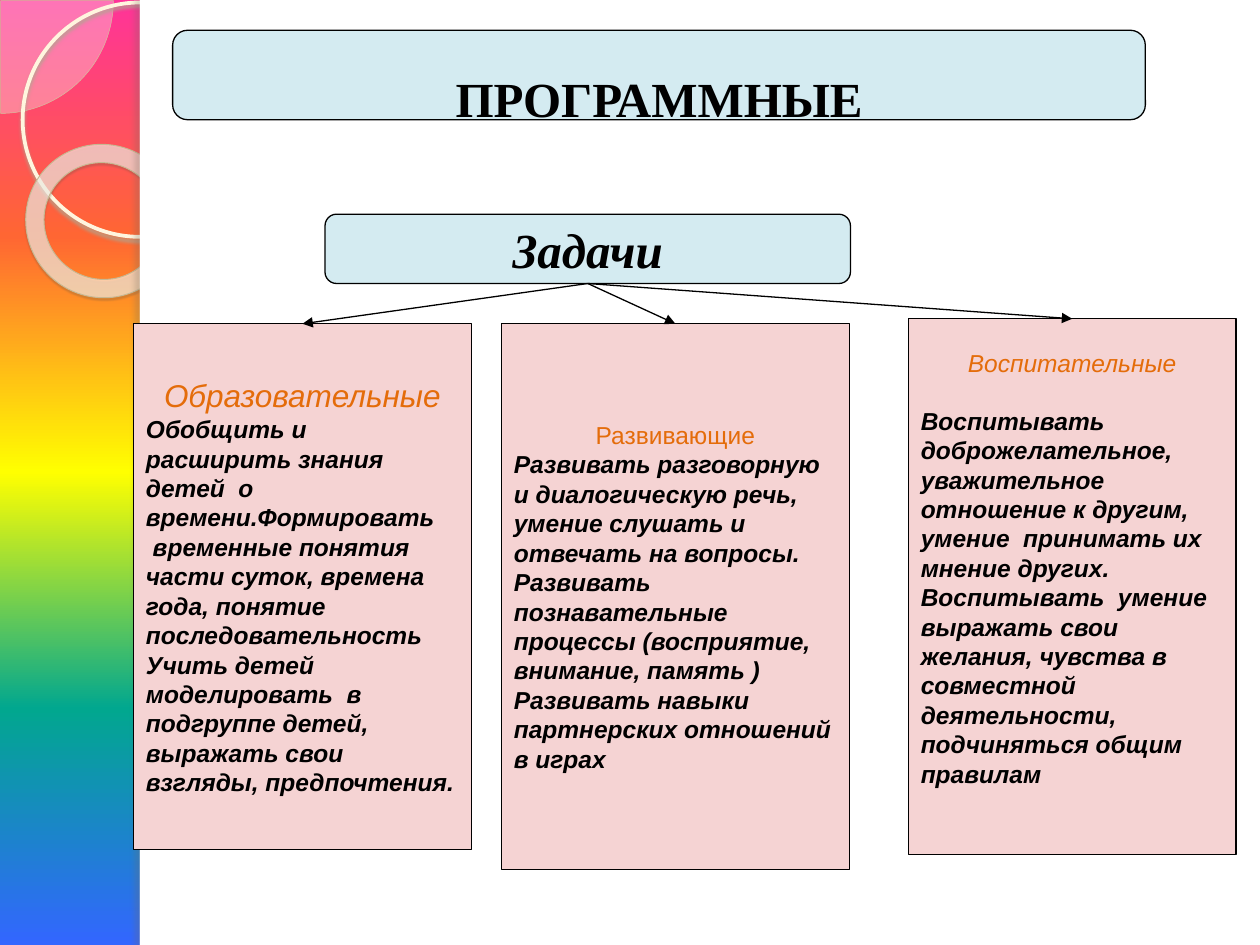
"""Build the slide of programme tasks in three groups."""
import pptx
import pptx.util
import pptx.dml.color
import pptx.enum.shapes
import pptx.enum.text
import pptx.oxml
import pptx.oxml.ns

Inches = pptx.util.Inches
Pt = pptx.util.Pt
RGB = pptx.dml.color.RGBColor
Kind = pptx.enum.shapes.MSO_SHAPE
Align = pptx.enum.text.PP_ALIGN
Anchor = pptx.enum.text.MSO_ANCHOR
qn = pptx.oxml.ns.qn

BLACK = RGB(0x00, 0x00, 0x00)
WHITE = RGB(0xFF, 0xFF, 0xFF)
ROSE = RGB(0xF5, 0xD3, 0xD3)
AQUA = RGB(0xD4, 0xEB, 0xF1)
ORANGE = RGB(0xE4, 0x6C, 0x0A)
IVORY = RGB(0xFE, 0xFA, 0xF4)
CREAM = RGB(0xFF, 0xF5, 0xDE)
PEARL = RGB(0xFF, 0xFC, 0xF5)
SAND = RGB(0xD3, 0xC3, 0x9F)
TAN = RGB(0xC7, 0xB8, 0x93)
DUSK = RGB(0xB0, 0xA6, 0x8F)
UMBER = RGB(0x5A, 0x54, 0x44)
STONE = RGB(0x73, 0x6F, 0x63)
RAINBOW = [RGB(0xFF, 0x33, 0x99), RGB(0xFF, 0x66, 0x33), RGB(0xFF, 0xFF, 0x00),
           RGB(0x01, 0xA7, 0x8F), RGB(0x33, 0x66, 0xFF)]

GROUPS = [
    ((1.06, 2.57, 2.68, 4.17), "Образовательные", 18, True, 0, 0.05, [
        "Обобщить и расширить знания детей  о времени.Формировать",
        " временные понятия части суток, времена года, понятие последовательность "
        "Учить детей моделировать  в подгруппе детей, выражать свои взгляды, "
        "предпочтения."]),
    ((3.98, 2.57, 2.76, 4.33), "Развивающие", 14, False, 0, 0.05, [
        "Развивать разговорную и диалогическую речь, умение слушать и отвечать "
        "на вопросы.",
        "Развивать познавательные процессы (восприятие, внимание, память )",
        "Развивать навыки партнерских отношений в играх"]),
    ((7.21, 2.53, 2.6, 4.25), "Воспитательные", 14, True, 16, 0.34, [
        "Воспитывать доброжелательное, уважительное отношение к другим, умение  "
        "принимать их мнение других.",
        "Воспитывать  умение выражать свои желания, чувства в совместной "
        "деятельности, подчиняться общим правилам"]),
]


class Deck:
    """Hold the style and the current slide."""

    sans = "Arial"
    serif = "Times New Roman"

    def __init__(self):
        self.file = pptx.Presentation()
        self.file.slide_width, self.file.slide_height = Inches(10), Inches(7.5)
        self.slide = self.file.slides.add_slide(self.file.slide_layouts[5])

    def back(self, colors):
        fill = self.slide.background.fill
        fill.gradient()
        fill.gradient_angle = 270
        stops = next(self.slide.element.iter(qn("a:gsLst")))
        for stop in list(stops):
            stops.remove(stop)
        step = 100000 // (len(colors) - 1)
        for i, color in enumerate(colors):
            stops.append(pptx.oxml.parse_xml(
                f'<a:gs {pptx.oxml.ns.nsdecls("a")} pos="{i * step}">'
                f'<a:srgbClr val="{color}"/></a:gs>'))

    def shape(self, kind, place, fill=None, line=None, width=0.75, alpha=100):
        item = self.slide.shapes.add_shape(kind, *map(Inches, place))
        item.shadow.inherit = False
        if fill is None:
            item.fill.background()
        else:
            item.fill.solid()
            item.fill.fore_color.rgb = fill
        if alpha < 100:
            tint = next(item.element.spPr.iter(qn("a:srgbClr")))
            tint.append(pptx.oxml.parse_xml(
                f'<a:alpha {pptx.oxml.ns.nsdecls("a")} val="{alpha * 1000}"/>'))
        if line is None:
            item.line.fill.background()
        else:
            item.line.color.rgb = line
            item.line.width = Pt(width)
        return item

    def shade(self, item, color, alpha, blur, dist, angle):
        item.element.spPr.find(qn("a:effectLst")).append(pptx.oxml.parse_xml(
            f'<a:outerShdw {pptx.oxml.ns.nsdecls("a")} blurRad="{Pt(blur)}" '
            f'dist="{Pt(dist)}" dir="{angle * 60000}" algn="tl" rotWithShape="0">'
            f'<a:srgbClr val="{color}"><a:alpha val="{alpha * 1000}"/>'
            f'</a:srgbClr></a:outerShdw>'))

    def style(self, para, size, font, color=BLACK, bold=True, italic=True,
              align=Align.LEFT):
        para.alignment = align
        for run in para.runs:
            run.font.size, run.font.name = Pt(size), font
            run.font.bold, run.font.italic = bold, italic
            run.font.color.rgb = color

    def title(self, text, place):
        item = self.slide.shapes.title
        item.left, item.top, item.width, item.height = map(Inches, place)
        self.slide.shapes.element.append(item.element)
        frame = item.text_frame
        frame.text = text
        frame.vertical_anchor = Anchor.MIDDLE
        self.style(frame.paragraphs[0], 28, self.serif, italic=False,
                   align=Align.CENTER)

    def head(self, text, place):
        item = self.shape(Kind.FLOWCHART_ALTERNATE_PROCESS, place, AQUA, BLACK)
        frame = item.text_frame
        frame.text = text
        frame.word_wrap = False
        frame.vertical_anchor = Anchor.MIDDLE
        self.style(frame.paragraphs[0], 28, self.serif, align=Align.CENTER)
        return item

    def group(self, place, name, size, italic, gap, foot, tasks):
        item = self.shape(Kind.FLOWCHART_PROCESS, place, ROSE, BLACK)
        frame = item.text_frame
        frame.word_wrap = True
        frame.vertical_anchor = Anchor.MIDDLE
        frame.margin_bottom = Inches(foot)
        frame.text = "\n".join([name] + tasks)
        first, *rest = frame.paragraphs
        first.space_after = Pt(gap)
        self.style(first, size, self.sans, ORANGE, False, italic, Align.CENTER)
        for para in rest:
            self.style(para, 14, self.sans)
        return item

    def arrow(self, start, end):
        item = self.slide.shapes.add_connector(
            pptx.enum.shapes.MSO_CONNECTOR.STRAIGHT, 0, 0, 0, 0)
        item.begin_connect(start, 2)
        item.end_connect(end, 0)
        item.line.color.rgb = BLACK
        item.line.width = Pt(0.75)
        space = pptx.oxml.ns.nsdecls("a")
        item.line._get_or_add_ln().append(pptx.oxml.parse_xml(
            f'<a:tailEnd {space} type="triangle"/>'))
        item.element.spPr.append(pptx.oxml.parse_xml(f'<a:effectLst {space}/>'))

    def border(self):
        pie = self.shape(Kind.PIE, (-0.89, -0.89, 1.79, 1.79), IVORY, SAND, 0.25, 33)
        pie.adjustments[0], pie.adjustments[1] = 0, 54
        ring = self.shape(Kind.OVAL, (0.18, 0.02, 1.86, 1.86), None, CREAM, 2.15)
        self.shade(ring, DUSK, 85, 2, 2, 90)
        donut = self.shape(Kind.DONUT, (0.2, 1.15, 1.23, 1.21), PEARL, TAN, 0.58, 62)
        donut.adjustments[0] = 0.12
        donut.rotation = 38.6
        self.shade(donut, UMBER, 35, 1, 1.2, 75)
        self.shape(Kind.RECTANGLE, (1.11, 0, 8.89, 7.5), WHITE)
        strip = self.shape(Kind.RECTANGLE, (1.11, 0, 0.08, 7.5), WHITE)
        self.shade(strip, STONE, 25, 3, 3, 180)


def main():
    deck = Deck()
    deck.back(RAINBOW)
    deck.border()
    boxes = [deck.group(*group) for group in GROUPS]
    tasks = deck.head("Задачи", (2.58, 1.7, 4.17, 0.55))
    for box in boxes:
        deck.arrow(tasks, box)
    deck.shape(Kind.FLOWCHART_ALTERNATE_PROCESS, (1.37, 0.24, 7.72, 0.71), AQUA, BLACK)
    deck.title("ПРОГРАММНЫЕ", (1.37, 0.42, 7.72, 0.71))
    deck.file.save("out.pptx")


if __name__ == "__main__":
    main()
